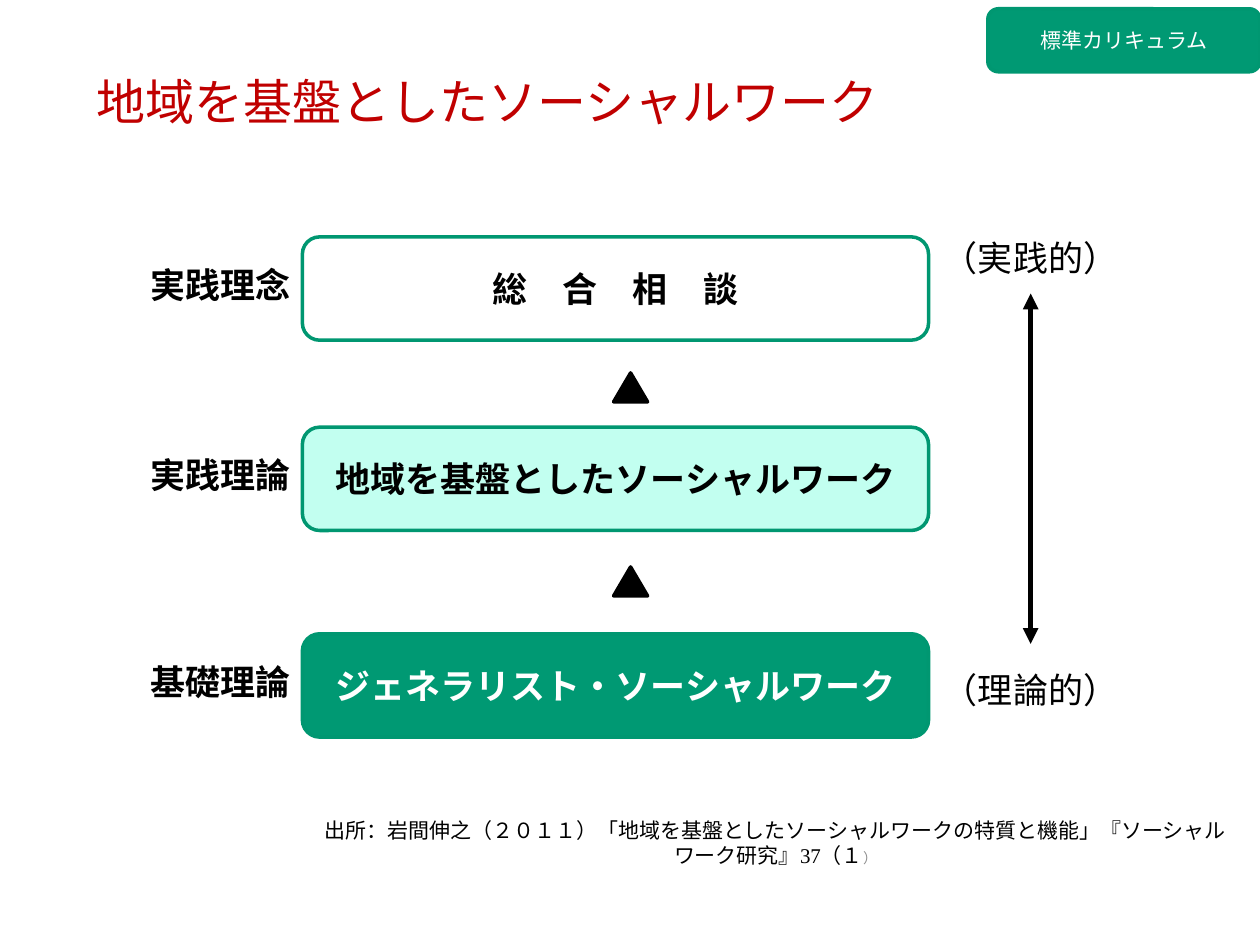
from lxml import etree
from pptx import Presentation
from pptx.dml.color import RGBColor
from pptx.enum.shapes import MSO_CONNECTOR, MSO_SHAPE
from pptx.enum.text import MSO_ANCHOR, PP_ALIGN
from pptx.oxml.ns import qn
from pptx.util import Inches, Pt

ROUNDED = MSO_SHAPE.ROUNDED_RECTANGLE
TRIANGLE = MSO_SHAPE.ISOSCELES_TRIANGLE
STRAIGHT = MSO_CONNECTOR.STRAIGHT
LEFT, CENTER = PP_ALIGN.LEFT, PP_ALIGN.CENTER
TOP, MIDDLE = MSO_ANCHOR.TOP, MSO_ANCHOR.MIDDLE

SANS, SERIF = "Noto Sans CJK JP", "Times New Roman"
BLACK, WHITE, RED, GREY = "000000", "FFFFFF", "C00000", "8C8C8C"
GREEN, EDGE, MINT = "009973", "009771", "C2FFF0"


def color(hex_text):
    """Return the colour for a hex string."""
    return RGBColor.from_string(hex_text)


def add_run(p, text, size=20, bold=False, ink=BLACK, font=SANS):
    """Add a formatted run with Latin and East Asian fonts."""
    r = p.add_run()
    r.text = text
    r.font.size = Pt(size)
    r.font.bold = bold
    r.font.name = font
    r.font.color.rgb = color(ink)
    etree.SubElement(r.font._element, qn("a:ea"), typeface=SANS)


def write(sp, text, align=CENTER, anchor=MIDDLE, **fmt):
    """Write one paragraph into a shape and return it."""
    tf = sp.text_frame
    tf.word_wrap = True
    tf.vertical_anchor = anchor
    p = tf.paragraphs[0]
    p.alignment = align
    add_run(p, text, **fmt)
    return p


def add_label(s, box, text, **fmt):
    """Add a text box and return its paragraph."""
    return write(s.shapes.add_textbox(*map(Inches, box)), text, **fmt)


def add_block(s, kind, box, fill=None, edge=EDGE):
    """Add a preset shape with a 2 pt outline."""
    sp = s.shapes.add_shape(kind, *map(Inches, box))
    sp.shadow.inherit = False
    if fill:
        sp.fill.solid()
        sp.fill.fore_color.rgb = color(fill)
    else:
        sp.fill.background()
    sp.line.color.rgb = color(edge)
    sp.line.width = Pt(2)
    return sp


def add_header(s, x, y):
    """Place the title and the curriculum tag."""
    add_label(s, (x, y, 6.85, 0.57), "地域を基盤としたソーシャルワーク",
              align=LEFT, anchor=TOP, size=28, ink=RED)
    tag = add_block(s, ROUNDED, (x + 7.17, y - 0.45, 2.16, 0.5), GREEN)
    write(tag, "標準カリキュラム", size=12, ink=WHITE, font=SERIF)


def add_level(s, x, y, label, text, fill, ink):
    """Place one level: its name on the left and its box."""
    write(add_block(s, ROUNDED, (x + 1.4, y, 4.97, 0.82), fill), text, bold=True, ink=ink)
    add_label(s, (x, y - 0.12, 1.5, 0.99), label, bold=True)


def add_levels(s, x):
    """Place the three levels and the triangles between them."""
    levels = [
        (1.88, "実践理念", "総　合　相　談", None, BLACK),
        (3.39, "実践理論", "地域を基盤としたソーシャルワーク", MINT, BLACK),
        (5.03, "基礎理論", "ジェネラリスト・ソーシャルワーク", GREEN, WHITE),
    ]
    for y, *level in levels:
        add_level(s, x, y, *level)
    for y in (2.96, 4.5):
        add_block(s, TRIANGLE, (x + 3.87, y, 0.27, 0.23), BLACK, BLACK)


def add_axis(s, x, y):
    """Place the two-headed arrow and the words at its ends."""
    add_label(s, (x, y, 1.64, 0.99), "（実践的）")
    add_label(s, (x, y + 3.43, 1.64, 0.99), "（理論的）")
    mid = Inches(x + 0.82)
    line = s.shapes.add_connector(STRAIGHT, mid, Inches(y + 0.78), mid, Inches(y + 3.56))
    line.line.color.rgb = color(BLACK)
    line.line.width = Pt(3)
    props = line._element.spPr
    for end in ("a:headEnd", "a:tailEnd"):
        etree.SubElement(props.find(qn("a:ln")), qn(end), type="triangle")
    etree.SubElement(props, qn("a:effectLst"))


def add_source(s, box):
    """Place the citation."""
    p = add_label(s, box, "出所：岩間伸之（２０１１）「地域を基盤としたソーシャルワークの特質と機能」"
                  "『ソーシャルワーク研究』37（１", size=12, font=SERIF)
    add_run(p, "）", size=8, ink=GREY, font=SERIF)


def main():
    """Build and save the slide."""
    prs = Presentation()
    prs.slide_width, prs.slide_height = Inches(10), Inches(7.5)
    s = prs.slides.add_slide(prs.slide_layouts[6])
    add_header(s, 0.67, 0.52)
    add_levels(s, 1)
    add_axis(s, 7.36, 1.55)
    add_source(s, (2.4, 6.51, 7.51, 0.36))
    prs.save("out.pptx")


if __name__ == "__main__":
    main()
